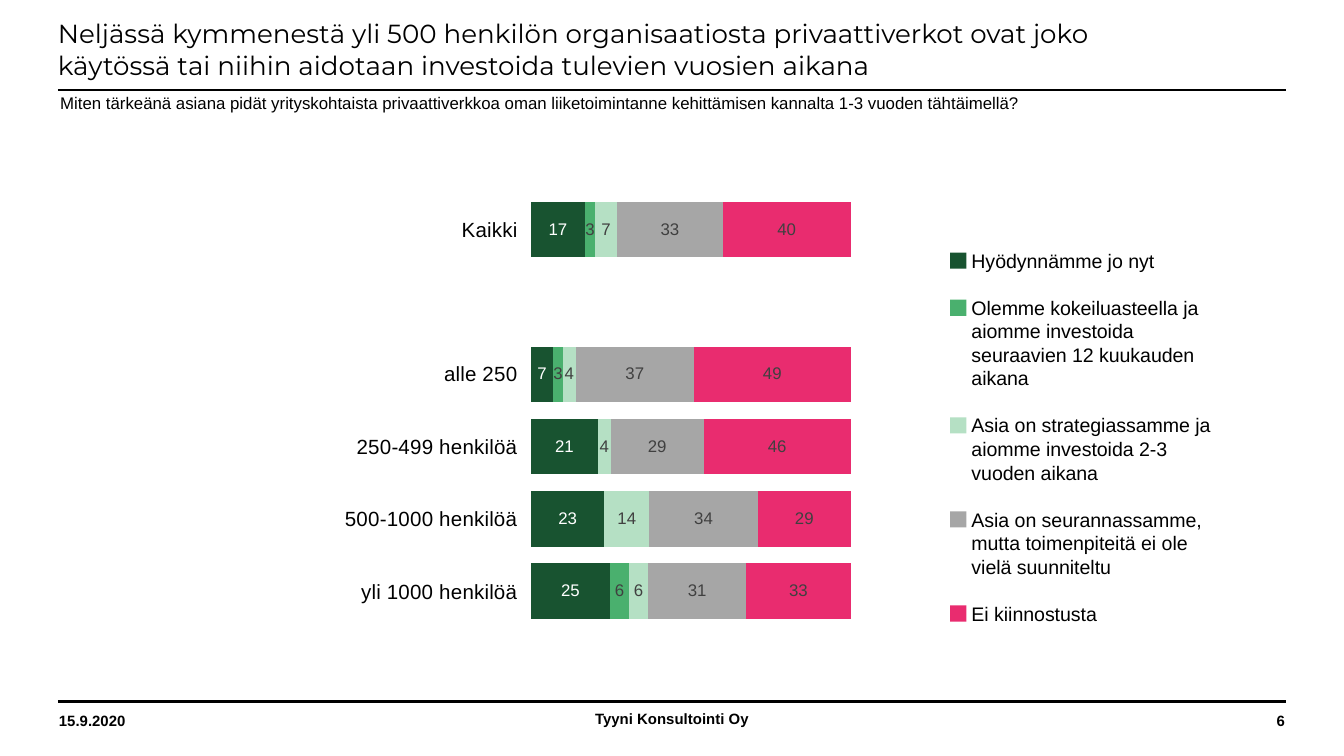
"""Build a survey slide with a stacked bar chart of interest in private networks."""
from lxml.etree import SubElement
from pptx import Presentation
from pptx.chart.data import CategoryChartData
from pptx.dml.color import RGBColor
from pptx.enum.chart import XL_CHART_TYPE, XL_LABEL_POSITION, XL_TICK_LABEL_POSITION, XL_TICK_MARK
from pptx.enum.shapes import MSO_CONNECTOR, MSO_SHAPE
from pptx.enum.text import MSO_ANCHOR, MSO_AUTO_SIZE, PP_ALIGN
from pptx.oxml.ns import qn
from pptx.util import Inches, Pt

WIDTH, HEIGHT = 10, 10 * 9 / 16
TITLE = ("Neljässä kymmenestä yli 500 henkilön organisaatiosta privaattiverkot ovat joko "
         "käytössä tai niihin aidotaan investoida tulevien vuosien aikana")
QUESTION = ("Miten tärkeänä asiana pidät yrityskohtaista privaattiverkkoa oman "
            "liiketoimintanne kehittämisen kannalta 1-3 vuoden tähtäimellä?")
FOOTERS = [
    ("15.9.2020", (0.34, 5.21, 0.93, 0.3), PP_ALIGN.LEFT),
    ("Tyyni Konsultointi Oy", (3.31, 5.2, 3.38, 0.3), PP_ALIGN.CENTER),
    ("6", (9.03, 5.21, 0.63, 0.3), PP_ALIGN.RIGHT),
]
CATEGORIES = ["Kaikki", " ", "alle 250", "250-499 henkilöä", "500-1000 henkilöä", "yli 1000 henkilöä"]
ANSWERS = [
    ("Hyödynnämme jo nyt", 1, "185330", "FFFFFF", (17, None, 7, 21, 23, 25)),
    ("Olemme kokeiluasteella ja aiomme investoida seuraavien 12 kuukauden aikana", 4,
     "4AB06E", "404040", (3, None, 3, None, None, 6)),
    ("Asia on strategiassamme ja aiomme investoida 2-3 vuoden aikana", 3,
     "B5E0C4", "404040", (7, None, 4, 4, 14, 6)),
    ("Asia on seurannassamme, mutta toimenpiteitä ei ole vielä suunniteltu", 3,
     "A6A6A6", "404040", (33, None, 37, 29, 34, 31)),
    ("Ei kiinnostusta", 1, "E92C6F", "404040", (40, None, 49, 46, 29, 33)),
]
FRAME = (2, 1.2, 5, 3.7)
PLOT = (3.95, 1.44, 2.38, 3.23)
LEGEND_LINE = 12.6
RULES = (0.67, 5.22)
MARGIN = 0.43


def color(value):
    return RGBColor.from_string(value)


def inches(lengths):
    return [Inches(length) for length in lengths]


def apply(target, **values):
    for name, value in values.items():
        setattr(target, name, value)


def style(font, size, shade="000000", name="Arial", bold=False):
    apply(font, size=Pt(size), name=name, bold=bold)
    font.color.rgb = color(shade)


def add_text(page, place, paragraphs, size, align=PP_ALIGN.LEFT, bold=False, **frame_format):
    frame = page.shapes.add_textbox(*inches(place)).text_frame
    apply(frame, **{"word_wrap": True, **frame_format})
    for index, words in enumerate(paragraphs):
        para = frame.paragraphs[0] if index == 0 else frame.add_paragraph()
        para.text = words
        para.alignment = align
        style(para.font, size, bold=bold)
    return frame


def add_rule(page, top):
    rule = page.shapes.add_connector(
        MSO_CONNECTOR.STRAIGHT, *inches((MARGIN, top, WIDTH - MARGIN, top)))
    rule.line.width = Pt(1.25)
    rule.line.color.rgb = color("000000")
    SubElement(rule._element.spPr, qn("a:effectLst"))


def add_title(page):
    title = page.shapes.title
    apply(title, **dict(zip(("left", "top", "width", "height"), inches((0.33, 0.25, 8.21, 0.4)))))
    frame = title.text_frame
    frame.text = TITLE
    apply(frame, word_wrap=True, auto_size=MSO_AUTO_SIZE.NONE, vertical_anchor=MSO_ANCHOR.BOTTOM)
    para = frame.paragraphs[0]
    para.alignment = PP_ALIGN.LEFT
    style(para.font, 14, name="Montserrat")


def place_plot(chart):
    area = chart._chartSpace.chart.plotArea
    for old in area.findall(qn("c:layout")):
        area.remove(old)
    layout = SubElement(area, qn("c:layout"))
    area.insert(0, layout)
    manual = SubElement(layout, qn("c:manualLayout"))
    left, top, width, height = FRAME
    shares = {
        "x": (PLOT[0] - left) / width, "y": (PLOT[1] - top) / height,
        "w": PLOT[2] / width, "h": PLOT[3] / height,
    }
    settings = {"layoutTarget": "inner", "xMode": "edge", "yMode": "edge", **shares}
    for name, value in settings.items():
        SubElement(manual, qn(f"c:{name}")).set("val", str(value))


def add_bars(page):
    table = CategoryChartData(number_format="0")
    table.categories = CATEGORIES
    for name, _, _, _, values in ANSWERS:
        table.add_series(name, values)
    chart = page.shapes.add_chart(XL_CHART_TYPE.BAR_STACKED_100, *inches(FRAME), table).chart
    apply(chart, has_legend=False, has_title=False)
    style(chart.font, 9)
    apply(chart.value_axis, visible=False, has_major_gridlines=False,
          minimum_scale=0, maximum_scale=1)
    axis = chart.category_axis
    apply(axis, reverse_order=True, has_major_gridlines=False,
          major_tick_mark=XL_TICK_MARK.NONE, minor_tick_mark=XL_TICK_MARK.NONE,
          tick_label_position=XL_TICK_LABEL_POSITION.LOW)
    axis.format.line.fill.background()
    style(axis.tick_labels.font, 11)
    plot = chart.plots[0]
    apply(plot, gap_width=30, overlap=100, vary_by_categories=False)
    for series, (_, _, fill, shade, _) in zip(plot.series, ANSWERS):
        series.format.fill.solid()
        series.format.fill.fore_color.rgb = color(fill)
        labels = series.data_labels
        apply(labels, show_value=True, position=XL_LABEL_POSITION.CENTER,
              number_format="0", number_format_is_linked=False)
        style(labels.font, 9, shade)
    place_plot(chart)


def add_legend(page):
    frame = add_text(page, (7.13, 1.8, 2.09, 2.93), [answer[0] for answer in ANSWERS], 10.5)
    line = 0
    for index, (para, (_, count, fill, _, _)) in enumerate(zip(frame.paragraphs, ANSWERS)):
        apply(para, line_spacing=Pt(LEGEND_LINE), space_before=Pt(LEGEND_LINE if index else 0))
        top = 1.88 + line * LEGEND_LINE / 72
        key = page.shapes.add_shape(MSO_SHAPE.RECTANGLE, *inches((7.07, top, 0.12, 0.12)))
        key.shadow.inherit = False
        key.fill.solid()
        key.fill.fore_color.rgb = color(fill)
        key.line.fill.background()
        line += count + 1


def main():
    deck = Presentation()
    apply(deck, slide_width=Inches(WIDTH), slide_height=Inches(HEIGHT))
    page = deck.slides.add_slide(deck.slide_layouts[5])
    add_title(page)
    for top in RULES:
        add_rule(page, top)
    add_text(page, (0.35, 0.64, 7.4, 0.25), [QUESTION], 9, word_wrap=False)
    add_bars(page)
    add_legend(page)
    for words, place, align in FOOTERS:
        add_text(page, place, [words], 8, align, True, vertical_anchor=MSO_ANCHOR.MIDDLE)
    deck.save("out.pptx")


if __name__ == "__main__":
    main()
